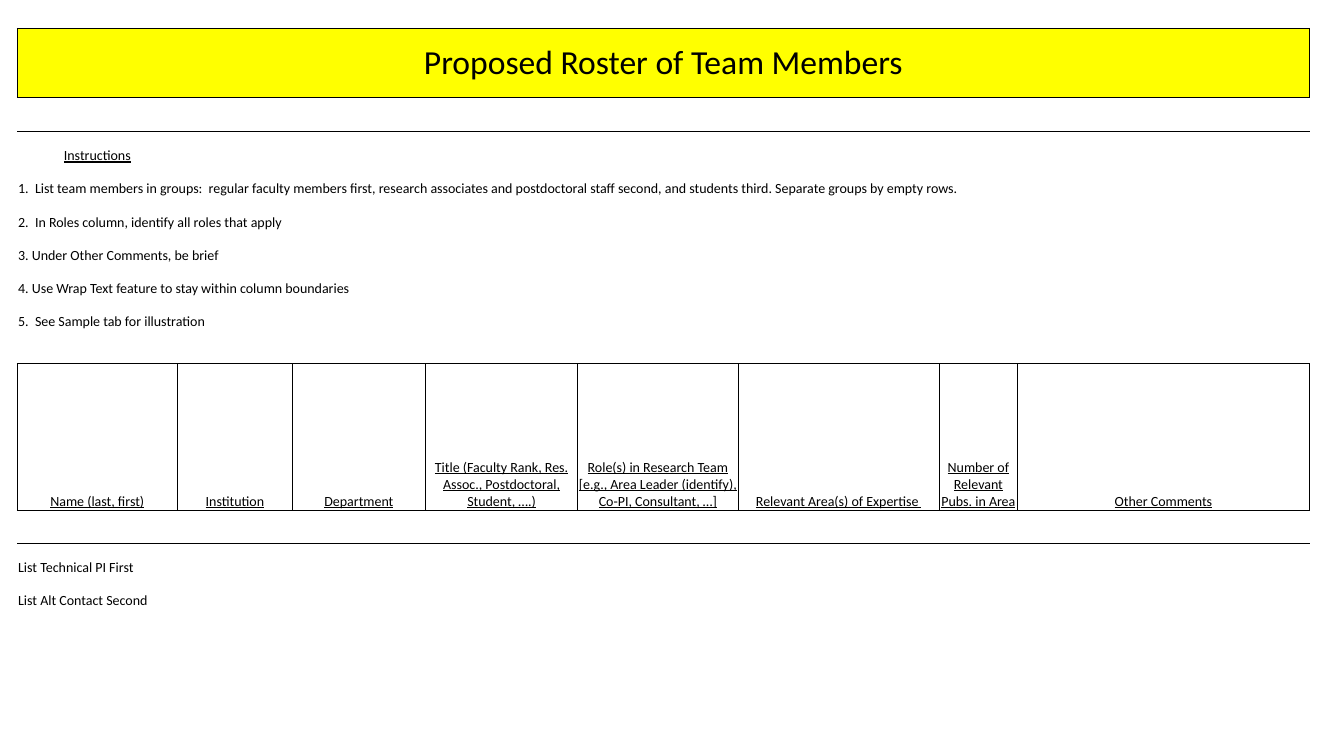
from pptx import Presentation
from pptx.dml.color import RGBColor
from pptx.enum.text import MSO_ANCHOR as Anchor, PP_ALIGN as Align
from pptx.oxml import parse_xml
from pptx.oxml.ns import nsdecls, qn
from pptx.util import Inches, Pt

BLACK = RGBColor(0, 0, 0)
YELLOW = RGBColor(255, 255, 0)
PLAIN_STYLE = "{2D5ABB26-0587-4C30-8999-92F81FD0307C}"

COLUMN_WIDTHS = [1.59, 1.14, 1.32, 1.51, 1.59, 2, 0.77, 2.9]
TITLE_HEIGHT, HEADER_HEIGHT, ROW_HEIGHT = 0.69, 1.45, 0.33
ROW_COUNT, HEADER_ROW = 14, 9

INSTRUCTIONS = [
    ("1.  List team members in groups:  regular faculty members first, research associates "
     "and postdoctoral staff second, and students third. Separate groups by empty rows.", 8),
    ("2.  In Roles column, identify all roles that apply", 3),
    ("3. Under Other Comments, be brief", 2),
    ("4. Use Wrap Text feature to stay within column boundaries", 3),
    ("5.  See Sample tab for illustration", 2),
]
HEADERS = [
    "Name (last, first)",
    "Institution",
    "Department",
    "Title (Faculty Rank, Res. Assoc., Postdoctoral, Student, ….)",
    "Role(s) in Research Team [e.g., Area Leader (identify), Co-PI, Consultant, …]",
    "Relevant Area(s) of Expertise ",
    "Number of Relevant Pubs. in Area",
    "Other Comments",
]
FIRST_ENTRIES = ["List Technical PI First", "List Alt Contact Second"]


def add_roster_table(page):
    frame = page.shapes.add_table(ROW_COUNT, len(COLUMN_WIDTHS), Inches(0.17), Inches(0.28),
                                  Inches(sum(COLUMN_WIDTHS)), Inches(6.11))
    next(frame.element.iter(qn("a:tableStyleId"))).text = PLAIN_STYLE
    table = frame.table
    table.first_row = table.horz_banding = False
    for column, width in zip(table.columns, COLUMN_WIDTHS):
        column.width = Inches(width)
    special_heights = {0: TITLE_HEIGHT, HEADER_ROW: HEADER_HEIGHT}
    for index, row in enumerate(table.rows):
        row.height = Inches(special_heights.get(index, ROW_HEIGHT))
    for cell in table.iter_cells():
        cell.margin_left = cell.margin_right = cell.margin_top = Inches(0.01)
        cell.margin_bottom = 0
        cell.vertical_anchor = Anchor.BOTTOM
        cell.fill.background()
    return table


def add_borders(cell, sides):
    properties = cell._tc.get_or_add_tcPr()
    for position, side in enumerate(sides):
        properties.insert(position, parse_xml(
            f'<a:ln{side} {nsdecls("a")} w="{Pt(0.5)}"><a:solidFill>'
            f'<a:srgbClr val="{BLACK}"/></a:solidFill></a:ln{side}>'))


def write_cell(cell, text, size=10, align=Align.LEFT, underline=False):
    para = cell.text_frame.paragraphs[0]
    para.alignment = align
    span = para.add_run()
    span.text = text
    span.font.name = "Calibri"
    span.font.size = Pt(size)
    span.font.underline = underline
    span.font.color.rgb = BLACK


def main():
    deck = Presentation()
    deck.slide_width, deck.slide_height = Inches(13.33), Inches(7.5)
    page = deck.slides.add_slide(deck.slide_layouts[6])
    table = add_roster_table(page)

    title = table.cell(0, 0)
    title.merge(table.cell(0, len(COLUMN_WIDTHS) - 1))
    title.vertical_anchor = Anchor.MIDDLE
    title.fill.solid()
    title.fill.fore_color.rgb = YELLOW
    add_borders(title, "LRTB")
    write_cell(title, "Proposed Roster of Team Members", size=24, align=Align.CENTER)

    write_cell(table.cell(2, 0), "Instructions", align=Align.CENTER, underline=True)
    for row, (text, columns) in enumerate(INSTRUCTIONS, start=3):
        cell = table.cell(row, 0)
        cell.merge(table.cell(row, columns - 1))
        write_cell(cell, text)

    for column, text in enumerate(HEADERS):
        header = table.cell(HEADER_ROW, column)
        write_cell(header, text, align=Align.CENTER, underline=True)
        add_borders(header, "LRTB")
        add_borders(table.cell(1, column), "T")
        add_borders(table.cell(HEADER_ROW - 1, column), "B")
        add_borders(table.cell(HEADER_ROW + 1, column), "T")

    for row, text in enumerate(FIRST_ENTRIES, start=HEADER_ROW + 2):
        write_cell(table.cell(row, 0), text)

    deck.save("out.pptx")


if __name__ == "__main__":
    main()
